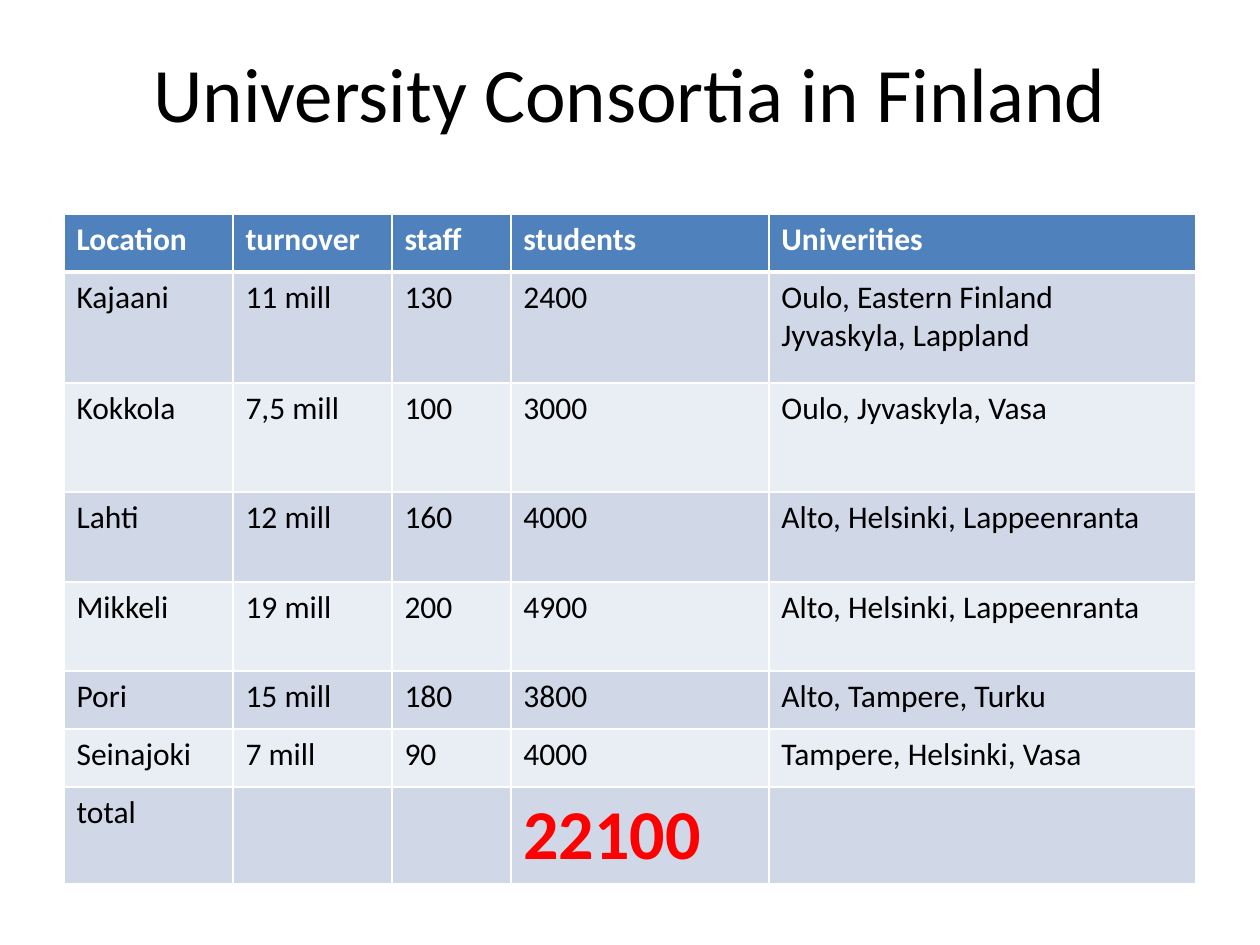
"""Build a one-slide table of the university consortia in Finland."""
import pptx
import pptx.dml.color
import pptx.enum.text
import pptx.oxml
import pptx.oxml.ns
import pptx.util

SCALE = 914400 // 126
WIDTHS = [169, 159, 119, 258, 427]
HEIGHTS = [58, 111, 109, 90, 89, 58, 58, 97]
ROWS = [
    ["Location", "turnover", "staff", "students", "Univerities"],
    ["Kajaani", "11 mill", "130", "2400", "Oulo, Eastern Finland\nJyvaskyla, Lappland"],
    ["Kokkola", "7,5 mill", "100", "3000", "Oulo, Jyvaskyla, Vasa"],
    ["Lahti", "12 mill", "160", "4000", "Alto, Helsinki, Lappeenranta"],
    ["Mikkeli", "19 mill", "200", "4900", "Alto, Helsinki, Lappeenranta"],
    ["Pori", "15 mill", "180", "3800", "Alto, Tampere, Turku"],
    ["Seinajoki", "7 mill", "90", "4000", "Tampere, Helsinki, Vasa"],
    ["total", "", "", "22100", ""],
]


def px(count):
    return pptx.util.Emu(count * SCALE)


def color(code):
    return pptx.dml.color.RGBColor.from_string(code)


class Deck:
    font = "Calibri"
    black, white, red = "000000", "FFFFFF", "FF0000"
    head, bands = "4F81BD", ("E9EDF4", "D0D8E8")

    def __init__(self, show):
        self.slide = show.slides.add_slide(show.slide_layouts[6])

    def label(self, frame, text, size, code, bold=False):
        frame.text = text
        for para in frame.paragraphs:
            para.font.name = self.font
            para.font.size = pptx.util.Pt(size)
            para.font.bold = bold
            para.font.color.rgb = color(code)

    def title(self, text, left, top, width, height):
        frame = self.slide.shapes.add_textbox(*map(px, (left, top, width, height))).text_frame
        frame.word_wrap = True
        frame.vertical_anchor = pptx.enum.text.MSO_ANCHOR.MIDDLE
        self.label(frame, text, 44, self.black)
        frame.paragraphs[0].alignment = pptx.enum.text.PP_ALIGN.CENTER

    def border(self, cell, row):
        props = cell._tc.get_or_add_tcPr()
        thick = {(0, "B"): 3, (1, "T"): 3}
        space = pptx.oxml.ns.nsdecls("a")
        for place, side in enumerate("LRTB"):
            width = pptx.util.Pt(thick.get((row, side), 1))
            props.insert(place, pptx.oxml.parse_xml(
                f'<a:ln{side} {space} w="{width}"><a:solidFill>'
                f'<a:srgbClr val="{self.white}"/></a:solidFill></a:ln{side}>'))

    def cell(self, cell, row, text):
        cell.fill.solid()
        cell.fill.fore_color.rgb = color(self.bands[row % 2] if row else self.head)
        self.border(cell, row)
        if text == "22100":
            self.label(cell.text_frame, text, 40, self.red, True)
        else:
            self.label(cell.text_frame, text, 18, self.black if row else self.white, row == 0)

    def table(self, rows, left, top, widths, heights):
        size = map(px, (left, top, sum(widths), sum(heights)))
        table = self.slide.shapes.add_table(len(rows), len(widths), *size).table
        for column, width in zip(table.columns, widths):
            column.width = px(width)
        for row, (texts, height) in enumerate(zip(rows, heights)):
            table.rows[row].height = px(height)
            for col, text in enumerate(texts):
                self.cell(table.cell(row, col), row, text)


def main():
    show = pptx.Presentation()
    show.slide_width, show.slide_height = px(1260), px(945)
    deck = Deck(show)
    deck.title("University Consortia in Finland", 63, 38, 1134, 107)
    deck.table(ROWS, 64, 214, WIDTHS, HEIGHTS)
    show.save("out.pptx")


if __name__ == "__main__":
    main()
